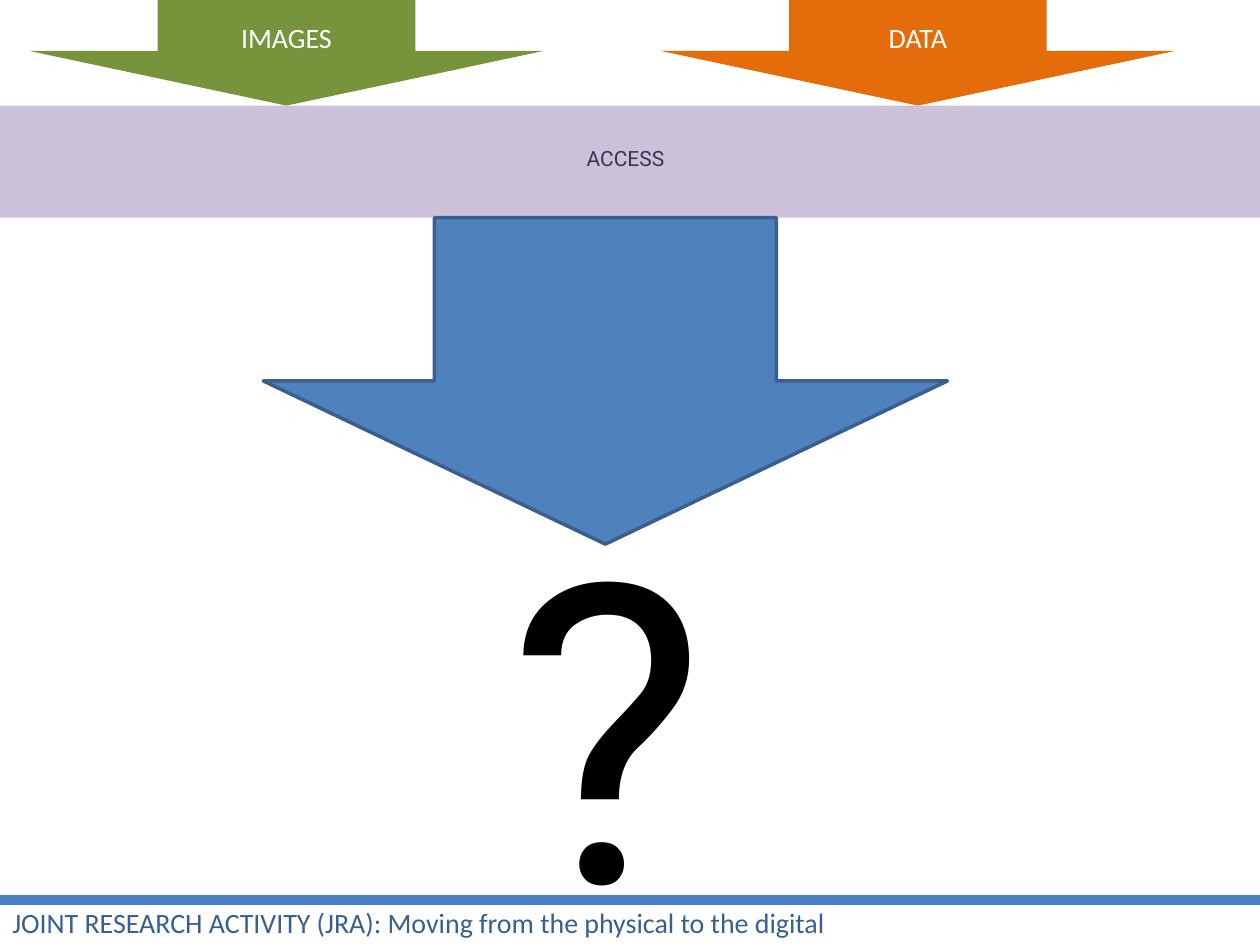
import pptx
import pptx.util
import pptx.dml.color
import pptx.enum.shapes
import pptx.enum.text
import pptx.oxml
import pptx.oxml.ns

Cm = pptx.util.Cm
Pt = pptx.util.Pt
SHAPES = pptx.enum.shapes.MSO_SHAPE
CENTER = pptx.enum.text.PP_ALIGN.CENTER
LEFT = pptx.enum.text.PP_ALIGN.LEFT

SLIDE_WIDTH, SLIDE_HEIGHT = 25.4, 19.05
FOOTER_TOP = 18.14
BAND_TOP, BAND_HEIGHT = 2.13, 2.26
SOURCE_TOP, SOURCE_WIDTH = -0.08, 10.39

SOURCES = [("IMAGES", 0.58, "77933C"), ("DATA", 13.31, "E46C0A")]
ACCESS = ("ACCESS", 12, "Roboto", "403152")
QUESTION = ("?", 239, "Roboto", "000000")
FOOTER = (
    "JOINT RESEARCH ACTIVITY (JRA): Moving from the physical to the digital",
    16, "Calibri", "376092",
)


def color(value):
    return pptx.dml.color.RGBColor.from_string(value)


def write(shape, text, size, font, text_color, alignment=CENTER):
    shape.text_frame.word_wrap = True
    paragraph = shape.text_frame.paragraphs[0]
    paragraph.text = text
    paragraph.alignment = alignment
    paragraph.font.size = Pt(size)
    paragraph.font.name = font
    paragraph.font.color.rgb = color(text_color)


def add_shape(slide, kind, box, fill=None, line=None):
    shape = slide.shapes.add_shape(kind, *map(Cm, box))
    shape.shadow.inherit = False
    if fill:
        shape.fill.solid()
        shape.fill.fore_color.rgb = color(fill)
    else:
        shape.fill.background()
    if line:
        shape.line.color.rgb = color(line)
        shape.line.width = Pt(2)
    else:
        shape.line.fill.background()
    return shape


def add_text(slide, box, content, alignment=CENTER):
    text_box = slide.shapes.add_textbox(*map(Cm, box))
    write(text_box, *content, alignment)


def add_rule(slide, top):
    rule = slide.shapes.add_connector(
        pptx.enum.shapes.MSO_CONNECTOR.STRAIGHT,
        Cm(0), Cm(top), Cm(SLIDE_WIDTH), Cm(top),
    )
    rule.line.color.rgb = color("4B7EBC")
    rule.line.width = Pt(5.5)
    properties = rule._element.spPr
    properties.append(
        properties.makeelement(pptx.oxml.ns.qn("a:effectLst"), {})
    )


def main():
    presentation = pptx.Presentation()
    presentation.slide_width = Cm(SLIDE_WIDTH)
    presentation.slide_height = Cm(SLIDE_HEIGHT)
    slide = presentation.slides.add_slide(presentation.slide_layouts[6])

    for label, left, fill in SOURCES:
        box = (left, SOURCE_TOP, SOURCE_WIDTH, BAND_TOP - SOURCE_TOP)
        arrow = add_shape(slide, SHAPES.DOWN_ARROW, box, fill)
        write(arrow, label, 16, "Calibri", "FFFFFF")

    add_shape(slide, SHAPES.RECTANGLE, (0, BAND_TOP, 25.7, BAND_HEIGHT), "CCC1DA")
    access = add_shape(slide, SHAPES.ROUNDED_RECTANGLE, (4.95, 2.26, 15.32, 1.85))
    write(access, *ACCESS)

    result_box = (5.31, BAND_TOP + BAND_HEIGHT, 13.79, 6.58)
    add_shape(slide, SHAPES.DOWN_ARROW, result_box, "4F81BD", "3A5F8C")
    add_text(slide, (9.09, 9.25, 6.32, 10.46), QUESTION)

    add_rule(slide, FOOTER_TOP)
    add_text(slide, (0, FOOTER_TOP, 19.71, 0.94), FOOTER, LEFT)

    presentation.save("out.pptx")


if __name__ == "__main__":
    main()
